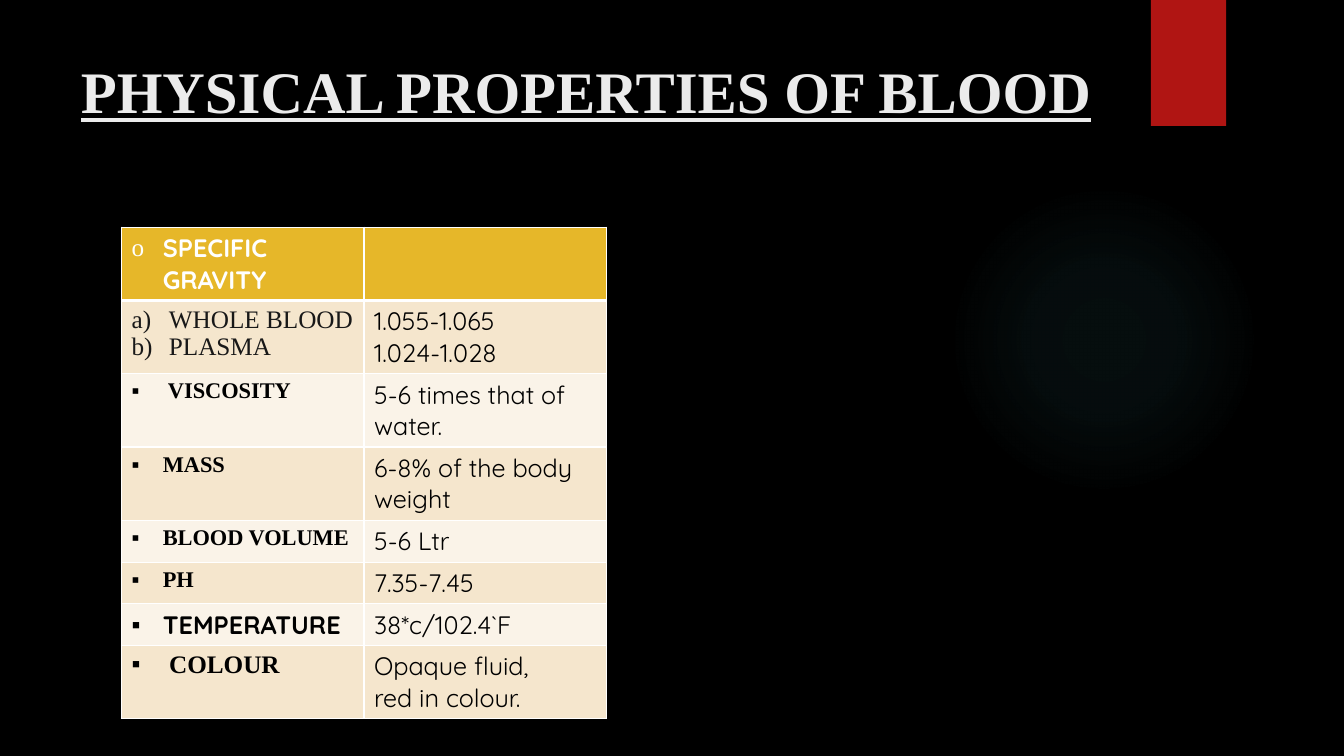
from dataclasses import dataclass
from typing import Optional

from lxml.etree import SubElement
from pptx import Presentation
from pptx.dml.color import RGBColor
from pptx.enum.shapes import MSO_SHAPE
from pptx.enum.text import MSO_ANCHOR, MSO_AUTO_SIZE, PP_ALIGN
from pptx.oxml import parse_xml
from pptx.oxml.ns import nsdecls, qn
from pptx.util import Inches, Pt


@dataclass(frozen=True)
class Theme:
    background: str = "000000"
    title: str = "EBEBEB"
    ribbon: str = "B01513"
    glow: str = "50B9C1"
    header: str = "E6B729"
    bands: tuple[str, str] = ("F5E6CD", "FAF3E8")
    border: str = "FFFFFF"
    ink: str = "000000"
    soft_ink: str = "181818"
    serif: str = "Times New Roman"
    sans: str = "Quicksand"
    title_size: int = 42
    body_size: int = 18
    label_size: int = 16


@dataclass(frozen=True)
class Box:
    """Left, top, width and height as percentages of the slide."""
    left: float
    top: float
    width: float
    height: float


@dataclass(frozen=True)
class Style:
    font: str
    size: int
    color: str
    bold: bool = False
    underline: bool = False


@dataclass(frozen=True)
class Property:
    labels: tuple[str, ...]
    values: tuple[str, ...]
    style: Style
    bullet: Optional[str] = "▪"  # None numbers the labels a), b)
    indent: float = 0.31


THEME = Theme()
SLIDE_WIDTH, SLIDE_HEIGHT = Inches(13.33), Inches(7.5)

TITLE_BOX = Box(5.27, 6.58, 77.19, 20.4)
GLOW_BOX = Box(70.59, 24.4, 23.11, 41.07)
RIBBON_BOX = Box(85.63, 0, 5.6, 16.67)
TABLE_BOX = Box(9.04, 30.05, 36.08, 43.73)

TITLE = Style(THEME.serif, THEME.title_size, THEME.title, bold=True, underline=True)
HEADING = Style(THEME.sans, THEME.body_size, THEME.border, bold=True)
PART = Style(THEME.serif, THEME.body_size, THEME.soft_ink)
LABEL = Style(THEME.serif, THEME.label_size, THEME.ink, bold=True)
LARGE_LABEL = Style(THEME.serif, THEME.body_size, THEME.ink, bold=True)
SANS_LABEL = Style(THEME.sans, THEME.body_size, THEME.ink, bold=True)
VALUE = Style(THEME.sans, THEME.body_size, THEME.ink)

PROPERTIES = (
    Property(("SPECIFIC GRAVITY",), (), HEADING, bullet="o"),
    Property(("WHOLE BLOOD", "PLASMA"), ("1.055-1.065", "1.024-1.028"), PART, None, 0.37),
    Property((" VISCOSITY",), ("5-6 times that of water.",), LABEL),
    Property(("MASS",), ("6-8% of the body weight",), LABEL),
    Property(("BLOOD VOLUME",), ("5-6 Ltr",), LABEL),
    Property(("PH",), ("7.35-7.45",), LABEL),
    Property(("TEMPERATURE",), ("38*c/102.4`F",), SANS_LABEL),
    Property((" COLOUR",), ("Opaque fluid,", "red in colour."), LARGE_LABEL),
)


def place(box: Box) -> tuple[int, int, int, int]:
    return (int(SLIDE_WIDTH * box.left / 100), int(SLIDE_HEIGHT * box.top / 100),
            int(SLIDE_WIDTH * box.width / 100), int(SLIDE_HEIGHT * box.height / 100))


def add_span(para, text: str, style: Style) -> None:
    span = para.add_run()
    span.text = text
    span.font.name = style.font
    span.font.size = Pt(style.size)
    span.font.bold = style.bold
    span.font.underline = style.underline
    span.font.color.rgb = RGBColor.from_string(style.color)


def add_bullet(para, bullet: Optional[str], indent: float) -> None:
    settings = para._p.get_or_add_pPr()
    settings.set("marL", str(Inches(indent)))
    settings.set("indent", str(-Inches(indent)))
    SubElement(settings, qn("a:buFont"), typeface=THEME.serif)
    if bullet:
        SubElement(settings, qn("a:buChar"), char=bullet)
    else:
        SubElement(settings, qn("a:buAutoNum"), type="alphaLcParenR")


def fill_cell(cell, lines: tuple[str, ...], style: Style, item: Optional[Property] = None) -> None:
    for index, line in enumerate(lines):
        frame = cell.text_frame
        para = frame.paragraphs[0] if index == 0 else frame.add_paragraph()
        if item:
            add_bullet(para, item.bullet, item.indent)
        add_span(para, line, style)


def paint_cell(cell, color: str, top: int, bottom: int) -> None:
    cell.fill.solid()
    cell.fill.fore_color.rgb = RGBColor.from_string(color)
    # A slim right margin keeps the longest label on one line
    cell.margin_right = Inches(0.08)
    settings = cell._tc.get_or_add_tcPr()
    sides = {"lnL": 1, "lnR": 1, "lnT": top, "lnB": bottom}
    for position, (side, width) in enumerate(sides.items()):
        settings.insert(position, parse_xml(
            f'<a:{side} {nsdecls("a")} w="{Pt(width)}"><a:solidFill>'
            f'<a:srgbClr val="{THEME.border}"/></a:solidFill></a:{side}>'))


def add_glow(page) -> None:
    glow = page.shapes.add_shape(MSO_SHAPE.OVAL, *place(GLOW_BOX))
    glow.line.fill.background()
    glow.shadow.inherit = False
    stops = "".join(
        f'<a:gs pos="{position * 1000}"><a:srgbClr val="{THEME.glow}">'
        f'<a:alpha val="{opacity * 1000}"/></a:srgbClr></a:gs>'
        for position, opacity in ((0, 7), (36, 6), (69, 0)))
    gradient = parse_xml(
        f'<a:gradFill {nsdecls("a")}><a:gsLst>{stops}</a:gsLst><a:path path="circle">'
        '<a:fillToRect l="50000" t="50000" r="50000" b="50000"/></a:path></a:gradFill>')
    glow._element.spPr.find(qn("a:prstGeom")).addnext(gradient)


def add_ribbon(page) -> None:
    ribbon = page.shapes.add_shape(MSO_SHAPE.RECTANGLE, *place(RIBBON_BOX))
    ribbon.fill.solid()
    ribbon.fill.fore_color.rgb = RGBColor.from_string(THEME.ribbon)
    ribbon.line.fill.background()
    ribbon.shadow.inherit = False
    effects = ribbon._element.spPr.find(qn("a:effectLst"))
    effects.append(parse_xml(
        f'<a:outerShdw {nsdecls("a")} blurRad="{Pt(3)}" dist="{Pt(2)}" dir="5400000" '
        f'rotWithShape="0"><a:srgbClr val="{THEME.background}"><a:alpha val="45000"/>'
        '</a:srgbClr></a:outerShdw>'))


def add_title(page) -> None:
    title = page.shapes.title
    title.left, title.top, title.width, title.height = place(TITLE_BOX)
    frame = title.text_frame
    frame.word_wrap = True
    frame.auto_size = MSO_AUTO_SIZE.NONE
    frame.vertical_anchor = MSO_ANCHOR.TOP
    para = frame.paragraphs[0]
    para.alignment = PP_ALIGN.LEFT
    add_span(para, "PHYSICAL PROPERTIES OF BLOOD", TITLE)


def add_properties(page) -> None:
    table = page.shapes.add_table(len(PROPERTIES), 2, *place(TABLE_BOX)).table
    table.horz_banding = False
    for index, item in enumerate(PROPERTIES):
        table.rows[index].height = Inches(0.41)
        label, value = table.cell(index, 0), table.cell(index, 1)
        fill_cell(label, item.labels, item.style, item)
        fill_cell(value, item.values, VALUE)
        color = THEME.bands[(index - 1) % 2] if index else THEME.header
        for cell in (label, value):
            paint_cell(cell, color, top=3 if index == 1 else 1, bottom=1 if index else 3)


def main() -> None:
    deck = Presentation()
    deck.slide_width, deck.slide_height = SLIDE_WIDTH, SLIDE_HEIGHT
    page = deck.slides.add_slide(deck.slide_layouts[5])
    page.background.fill.solid()
    page.background.fill.fore_color.rgb = RGBColor.from_string(THEME.background)

    # Decoration
    add_glow(page)
    add_ribbon(page)

    # Content
    add_title(page)
    add_properties(page)
    deck.save("out.pptx")


if __name__ == "__main__":
    main()
